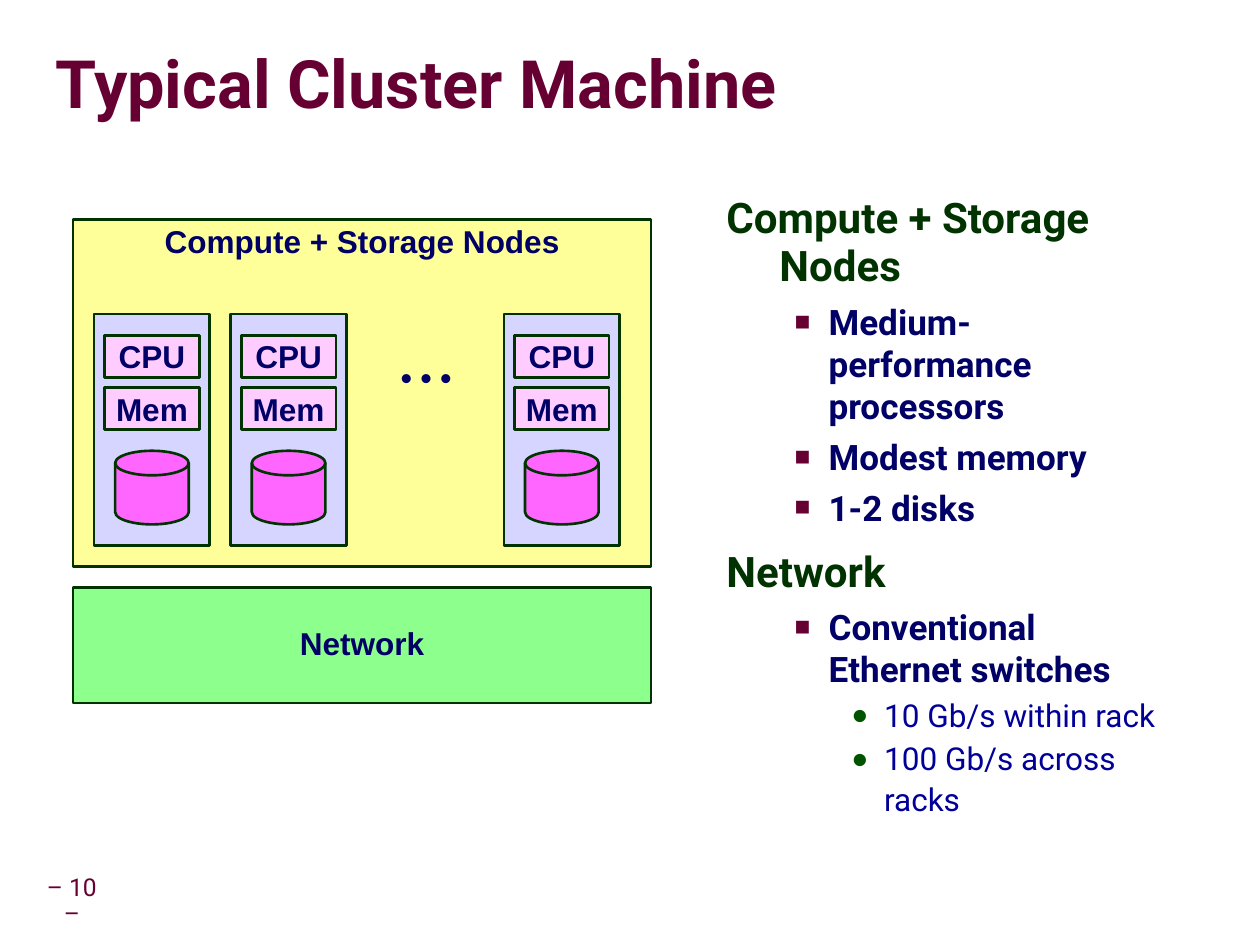
from lxml.etree import SubElement
from pptx import Presentation
from pptx.dml.color import RGBColor
from pptx.enum.shapes import MSO_SHAPE as Preset
from pptx.enum.text import MSO_ANCHOR as Anchor, MSO_AUTO_SIZE as AutoSize, PP_ALIGN as Align
from pptx.oxml.ns import qn
from pptx.util import Inches, Pt

MAROON = RGBColor(0x66, 0x00, 0x33)
DARK_GREEN = RGBColor(0x00, 0x33, 0x00)
BULLET_GREEN = RGBColor(0x00, 0x54, 0x00)
NAVY = RGBColor(0x00, 0x00, 0x66)
BLUE = RGBColor(0x00, 0x00, 0x99)
YELLOW = RGBColor(0xFF, 0xFF, 0x99)
NETWORK_GREEN = RGBColor(0x8C, 0xFF, 0x8C)
LAVENDER = RGBColor(0xD5, 0xD5, 0xFF)
PINK = RGBColor(0xFF, 0xCC, 0xFF)
MAGENTA = RGBColor(0xFF, 0x66, 0xFF)

TITLE = "Typical Cluster Machine"
PAGE = "– 10 –"
DOTS = "• • •"
OUTLINE = [
    (0, "Compute + Storage Nodes"),
    (1, "Medium-performance processors"),
    (1, "Modest memory"),
    (1, "1-2 disks"),
    (0, "Network"),
    (1, "Conventional Ethernet switches"),
    (2, "10 Gb/s within rack"),
    (2, "100 Gb/s across racks"),
]
LEVELS = [
    dict(size=24, color=DARK_GREEN, bold=True, spacing=0.95, before=12, margin=0.42, hang=0.42),
    dict(size=20, color=NAVY, bold=True, spacing=1.0, before=5, margin=0.81, hang=0.27,
         bullet=("■", MAROON, 75)),
    dict(size=18, color=BLUE, bold=False, spacing=1.07, before=1.8, margin=1.25, hang=0.26,
         bullet=("●", BULLET_GREEN, 90)),
]

UNIT = 1 / 12
DIAGRAM_LEFT, DIAGRAM_TOP = 0.58, 1.74
PANELS = [
    ("Network", (0, 35, 55, 11), NETWORK_GREEN, Anchor.MIDDLE),
    ("Compute + Storage Nodes", (0, 0, 55, 33), YELLOW, Anchor.TOP),
]
NODE_SLOTS = (0, 1, 3)
NODE_PITCH = 13
NODE_PARTS = [
    ("", (2, 9, 11, 22), LAVENDER, Preset.RECTANGLE),
    ("CPU", (3, 11, 9, 4), PINK, Preset.RECTANGLE),
    ("Mem", (3, 16, 9, 4), PINK, Preset.RECTANGLE),
    ("", (4, 22, 7, 7), MAGENTA, Preset.FLOWCHART_MAGNETIC_DISK),
]
DOTS_CELL = (30, 13, 7.3, 4.4)


def write(paragraph, text, size=18, color=NAVY, bold=True, font="Roboto", align=Align.LEFT,
          spacing=0.9, before=0, margin=0, hang=0, bullet=None):
    run = paragraph.add_run()
    run.text = text
    run.font.name, run.font.size, run.font.bold = font, Pt(size), bold
    run.font.color.rgb = color
    paragraph.alignment, paragraph.line_spacing = align, spacing
    paragraph.space_before = Pt(before)
    props = paragraph._p.get_or_add_pPr()
    props.set("marL", str(Inches(margin)))
    props.set("indent", str(-Inches(hang)))
    if bullet:
        mark, mark_color, percent = bullet
        SubElement(SubElement(props, qn("a:buClr")), qn("a:srgbClr"), val=str(mark_color))
        SubElement(props, qn("a:buSzPct"), val=str(percent * 1000))
        SubElement(props, qn("a:buFont"), typeface="Arial")
        SubElement(props, qn("a:buChar"), char=mark)
    else:
        SubElement(props, qn("a:buNone"))
    return run


def setup(frame, inset_x, inset_y, anchor=Anchor.TOP, wrap=True):
    frame.auto_size = AutoSize.NONE
    frame.word_wrap, frame.vertical_anchor = wrap, anchor
    frame.margin_left = frame.margin_right = Inches(inset_x)
    frame.margin_top = frame.margin_bottom = Inches(inset_y)
    return frame


def place(placeholder, left, top, width, height):
    placeholder.left, placeholder.top = Inches(left), Inches(top)
    placeholder.width, placeholder.height = Inches(width), Inches(height)


def on_grid(col, row, cols, rows):
    return (Inches(DIAGRAM_LEFT + col * UNIT), Inches(DIAGRAM_TOP + row * UNIT),
            Inches(cols * UNIT), Inches(rows * UNIT))


def draw(shapes, label, cell, fill, preset=Preset.RECTANGLE, anchor=Anchor.TOP):
    part = shapes.add_shape(preset, *on_grid(*cell))
    part.shadow.inherit = False
    part.fill.solid()
    part.fill.fore_color.rgb = fill
    part.line.color.rgb = DARK_GREEN
    part.line.width = Pt(1.5)
    if label:
        frame = setup(part.text_frame, 0.05, 0.05, anchor, wrap=False)
        write(frame.paragraphs[0], label, font="Arial", align=Align.CENTER)


def main():
    deck = Presentation()
    deck.slide_width, deck.slide_height = Inches(9.99), Inches(7.49)
    slide = deck.slides.add_slide(deck.slide_layouts[1])
    shapes = slide.shapes

    page = shapes.add_textbox(Inches(0.29), Inches(6.99), Inches(0.56), Inches(0.31))
    write(setup(page.text_frame, 0.05, 0.05, Anchor.MIDDLE).paragraphs[0], PAGE,
          size=14, color=MAROON, bold=False, align=Align.CENTER)

    place(shapes.title, 0.44, 0.27, 9.52, 0.85)
    heading = write(setup(shapes.title.text_frame, 0, 0, Anchor.MIDDLE).paragraphs[0], TITLE,
                    size=38, color=MAROON, spacing=0.87)
    effects = SubElement(heading.font._element, qn("a:effectLst"))
    heading.font._element.find(qn("a:solidFill")).addnext(effects)
    shadow = SubElement(effects, qn("a:outerShdw"), dist="38100", dir="2700000")
    SubElement(shadow, qn("a:srgbClr"), val="999999")

    body = slide.placeholders[1]
    place(body, 5.66, 1.5, 3.73, 5.54)
    frame = setup(body.text_frame, 0.1, 0.05)
    for number, (level, text) in enumerate(OUTLINE):
        paragraph = frame.add_paragraph() if number else frame.paragraphs[0]
        paragraph.level = level
        write(paragraph, text, **LEVELS[level])

    for label, cell, fill, anchor in PANELS:
        draw(shapes, label, cell, fill, anchor=anchor)

    dots = shapes.add_textbox(*on_grid(*DOTS_CELL))
    write(setup(dots.text_frame, 0.1, 0.05, wrap=False).paragraphs[0], DOTS, font="Arial")

    for slot in NODE_SLOTS:
        node = shapes.add_group_shape()
        for label, (col, row, cols, rows), fill, preset in NODE_PARTS:
            draw(node.shapes, label, (col + slot * NODE_PITCH, row, cols, rows), fill, preset)

    deck.save("out.pptx")


if __name__ == "__main__":
    main()
